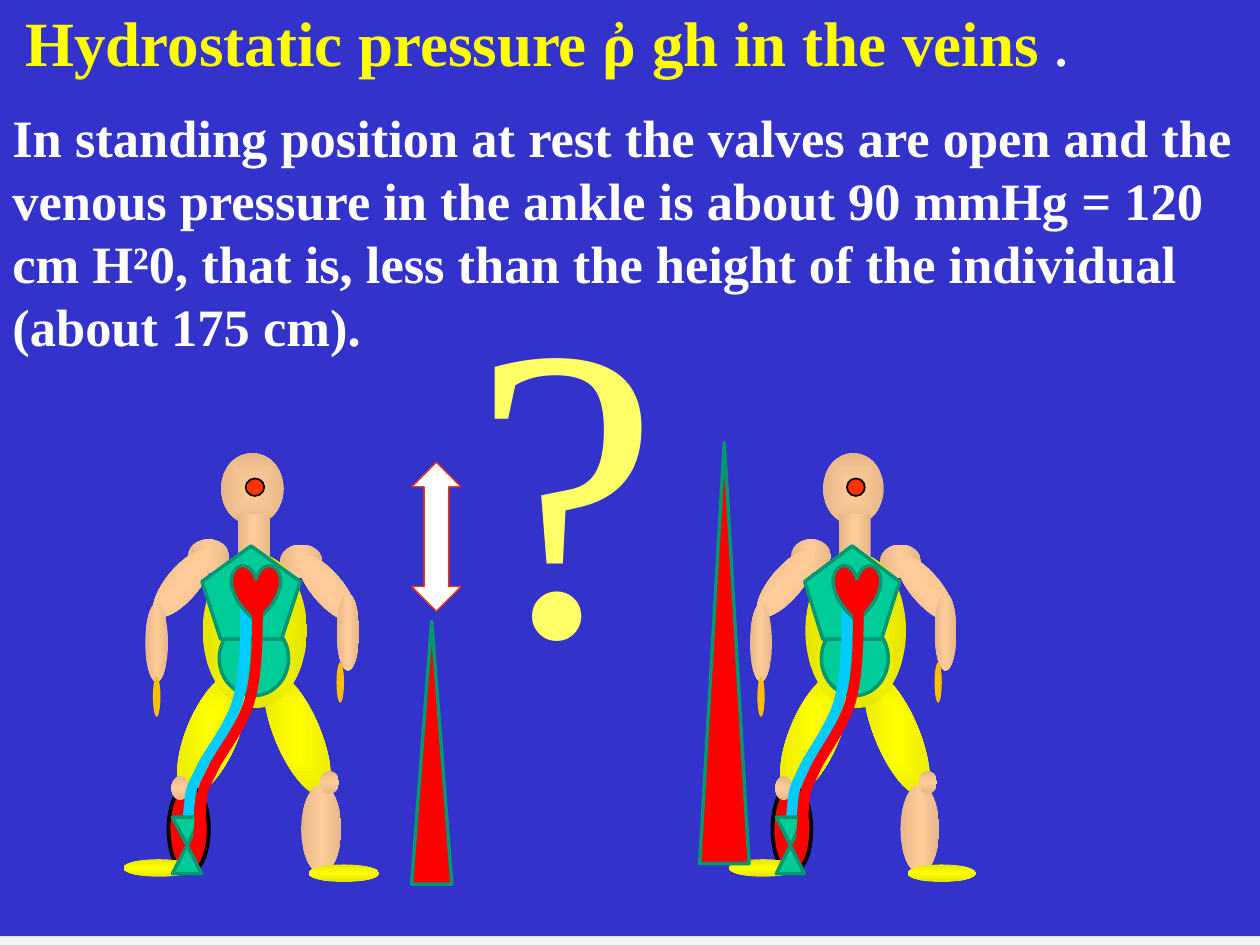
from pptx import Presentation
from pptx.dml.color import RGBColor as RGB
from pptx.enum.shapes import MSO_SHAPE as SHAPE
from pptx.enum.text import MSO_ANCHOR as ANCHOR, PP_ALIGN as ALIGN
from pptx.oxml import parse_xml
from pptx.util import Pt
from lxml.etree import SubElement

COLORS = {
    "backdrop": "F2F2F2", "panel": "3333CC", "white": "FFFFFF", "title": "FFFF00",
    "question": "FFFF66", "skin": "FFCC99", "skin_dark": "E5B789", "suit": "FFFF00",
    "suit_dark": "E5E500", "red": "FF0000", "black": "000000", "hand": "FFC000",
    "eye": "FF3300", "organ": "00CC99", "organ_line": "009771", "vein": "00CCFF",
}
FONT = "Times New Roman"
DRAWING_NS = "http://schemas.openxmlformats.org/drawingml/2006/main"
CENTER = '<a:path path="shape"><a:fillToRect l="50000" t="50000" r="50000" b="50000"/></a:path>'
ACROSS = '<a:lin ang="0" scaled="1"/>'
DOWN = '<a:lin ang="5400000" scaled="1"/>'

BALL, SKIN_DOWN = ("skin", CENTER), ("skin", DOWN)
SKIN, SUIT, SOLE = ("skin", ACROSS), ("suit", CENTER), ("suit", DOWN)
OUTLINE = ("organ_line", 2)
OVAL = SHAPE.OVAL

BODY = [
    (OVAL, 55.6, 258.8, 36, 41, BALL, None, 0),
    (OVAL, 36, 381.6, 29.5, 75.6, SUIT, None, 23),
    (OVAL, 86.4, 381.6, 26, 75.6, SUIT, None, 337),
    (OVAL, 25.7, 448.6, 23, 50.4, "red", ("black", 2.25), 0),
    (OVAL, 101.5, 448.6, 23, 50.4, SKIN, None, 0),
    (OVAL, 105.8, 494, 40.3, 10, SOLE, None, 0),
    (OVAL, 0, 491, 40.3, 10, SOLE, None, 0),
    (SHAPE.RECTANGLE, 65.2, 293.8, 18.7, 28.8, SKIN, None, 0),
    (OVAL, 89.3, 311.2, 24.5, 19.4, SKIN, None, 0),
    (OVAL, 36.7, 308.2, 23.8, 19.4, SKIN, None, 0),
    (OVAL, 24.5, 309.6, 18.7, 47.5, SKIN, None, 40),
    (OVAL, 107.3, 312.5, 18, 46.8, SKIN, None, 320),
    (OVAL, 27.4, 443.5, 10, 13.7, SKIN_DOWN, None, 0),
    (OVAL, 112.3, 440.6, 10.8, 13, SKIN_DOWN, None, 0),
    (OVAL, 12.4, 344.9, 13, 44.6, SKIN, None, 0),
    (OVAL, 121.7, 339.2, 13, 44, SKIN, None, 0),
    (OVAL, 16.8, 386.6, 4.3, 23, "hand", None, 0),
    (OVAL, 121.7, 378.5, 4.3, 23, "hand", None, 0),
    (OVAL, 69.8, 273.4, 10.6, 10, "eye", ("black", 1), 0),
    (OVAL, 45.2, 316.1, 59.6, 88.6, SUIT, None, 0),
    (OVAL, 54.7, 355, 39.6, 42.5, "organ", OUTLINE, 0),
    (SHAPE.REGULAR_PENTAGON, 44.8, 312, 56.2, 53.3, "organ", OUTLINE, 0),
]
HEART = (SHAPE.HEART, 61.7, 322.8, 28, 32.2, "red", OUTLINE, 0)
VALVE = (SHAPE.FLOWCHART_COLLATE, 28, 467, 16.6, 32.2, "organ", OUTLINE, 0)
VESSEL = [
    (36, 478), (36.7, 469.4), (37.4, 460.8), (38.2, 454.3),
    (39.6, 447.8), (39.6, 449.3), (44, 440),
    (48.2, 430.6), (61.2, 415.4), (65.5, 399.6),
    (69.8, 383), (69.8, 363), (69.8, 343.4),
]
ARTERY_SHIFT = 6.8


def add_run(paragraph, text, *, size, color, bold=False):
    run = paragraph.add_run()
    run.text = text
    font = run.font
    font.name, font.size, font.bold = FONT, Pt(size), bold
    font.color.rgb = RGB.from_string(COLORS[color])


class Sketch:
    def __init__(self, slide):
        self.slide = slide
        self.shapes = slide.shapes

    def paint(self, shape, fill, line):
        shape.shadow.inherit = False
        if fill is None:
            shape.fill.background()
        else:
            shape.fill.solid()
            if isinstance(fill, tuple):
                self.shade(shape, *fill)
            else:
                shape.fill.fore_color.rgb = RGB.from_string(COLORS[fill])
        if line is None:
            shape.line.fill.background()
        else:
            shape.line.color.rgb = RGB.from_string(COLORS[line[0]])
            shape.line.width = Pt(line[1])

    def shade(self, shape, tone, direction):
        light, dark = COLORS[tone], COLORS[tone + "_dark"]
        tones = [light, dark] if direction == CENTER else [dark, light, dark]
        stops = "".join(
            f'<a:gs pos="{100000 * i // (len(tones) - 1)}"><a:srgbClr val="{tone_hex}"/></a:gs>'
            for i, tone_hex in enumerate(tones))
        gradient = parse_xml(
            f'<a:gradFill xmlns:a="{DRAWING_NS}" rotWithShape="1">'
            f'<a:gsLst>{stops}</a:gsLst>{direction}</a:gradFill>')
        solid = shape.element.spPr.find(f"{{{DRAWING_NS}}}solidFill")
        solid.getparent().replace(solid, gradient)

    def preset(self, kind, left, top, width, height, fill, line=None, turn=0):
        shape = self.shapes.add_shape(kind, Pt(left), Pt(top), Pt(width), Pt(height))
        self.paint(shape, fill, line)
        shape.rotation = turn
        return shape

    def tube(self, points, color):
        start, *controls = [(Pt(x), Pt(y)) for x, y in points]
        builder = self.shapes.build_freeform(*start)
        builder.add_line_segments(controls, close=False)
        vessel = builder.convert_to_shape()
        segments = list(vessel.element.iter(f"{{{DRAWING_NS}}}lnTo"))
        outline = segments[0].getparent()
        for first in range(0, len(segments), 3):
            curve = SubElement(outline, f"{{{DRAWING_NS}}}cubicBezTo")
            for segment in segments[first:first + 3]:
                curve.append(segment[0])
                outline.remove(segment)
        self.paint(vessel, None, (color, 6))

    def column(self, left, top, width, height):
        wedge = self.preset(SHAPE.FLOWCHART_MERGE, left, top, width, height, "red", OUTLINE)
        wedge.element.spPr.xfrm.set("flipV", "1")

    def person(self, origin, stretch, column):
        def place(kind, left, top, width, *rest):
            self.preset(kind, origin + left * stretch, top, width * stretch, *rest)

        def vessel(shift, color):
            self.tube([(origin + (x + shift) * stretch, y) for x, y in VESSEL], color)

        self.shapes = self.slide.shapes.add_group_shape().shapes
        for part in BODY:
            place(*part)
        vessel(0, "vein")
        place(*HEART)
        place(*VALVE)
        self.column(*column)
        vessel(ARTERY_SHIFT, "red")
        self.shapes = self.slide.shapes

    def paragraph(self, paragraph, runs, before):
        paragraph.alignment = ALIGN.LEFT
        paragraph.space_before = Pt(before)
        for text, style in runs:
            add_run(paragraph, text, **style)

    def text_area(self, shape):
        frame = shape.text_frame
        frame.word_wrap = True
        frame.vertical_anchor = ANCHOR.TOP
        return frame


def main():
    deck = Presentation()
    deck.slide_width, deck.slide_height = Pt(720), Pt(540)
    slide = deck.slides.add_slide(deck.slide_layouts[6])
    slide.background.fill.solid()
    slide.background.fill.fore_color.rgb = RGB.from_string(COLORS["backdrop"])
    sketch = Sketch(slide)

    statement = sketch.text_area(sketch.preset(SHAPE.RECTANGLE, 0, -1.5, 720, 536.5, "panel"))
    sketch.paragraph(statement.paragraphs[0], [
        (" ", dict(size=30, color="white", bold=True)),
        ("Hydrostatic pressure ῤ gh in the veins ", dict(size=36, color="title", bold=True)),
        (".", dict(size=28, color="white", bold=True)),
    ], 18)
    sketch.paragraph(statement.add_paragraph(), [
        ("In standing position at rest the valves are open and the venous pressure in the ankle "
         "is about 90 mmHg = 120 cm H²0, that is, less than the height of the individual "
         "(about 175 cm).", dict(size=30, color="white", bold=True)),
    ], 15)

    sketch.person(70.6, 1, (235.2, 355, 23, 150.2))
    sketch.person(416.6, 0.965, (399.8, 253, 28.2, 240.5))

    question = sketch.text_area(
        sketch.shapes.add_textbox(Pt(263.5), Pt(120.6), Pt(147.6), Pt(296.6)))
    sketch.paragraph(question.paragraphs[0], [("?", dict(size=239, color="question"))], 0)
    sketch.preset(SHAPE.UP_DOWN_ARROW, 235.4, 264.2, 28, 85, "white", ("eye", 0.75))

    deck.save("out.pptx")


if __name__ == "__main__":
    main()
